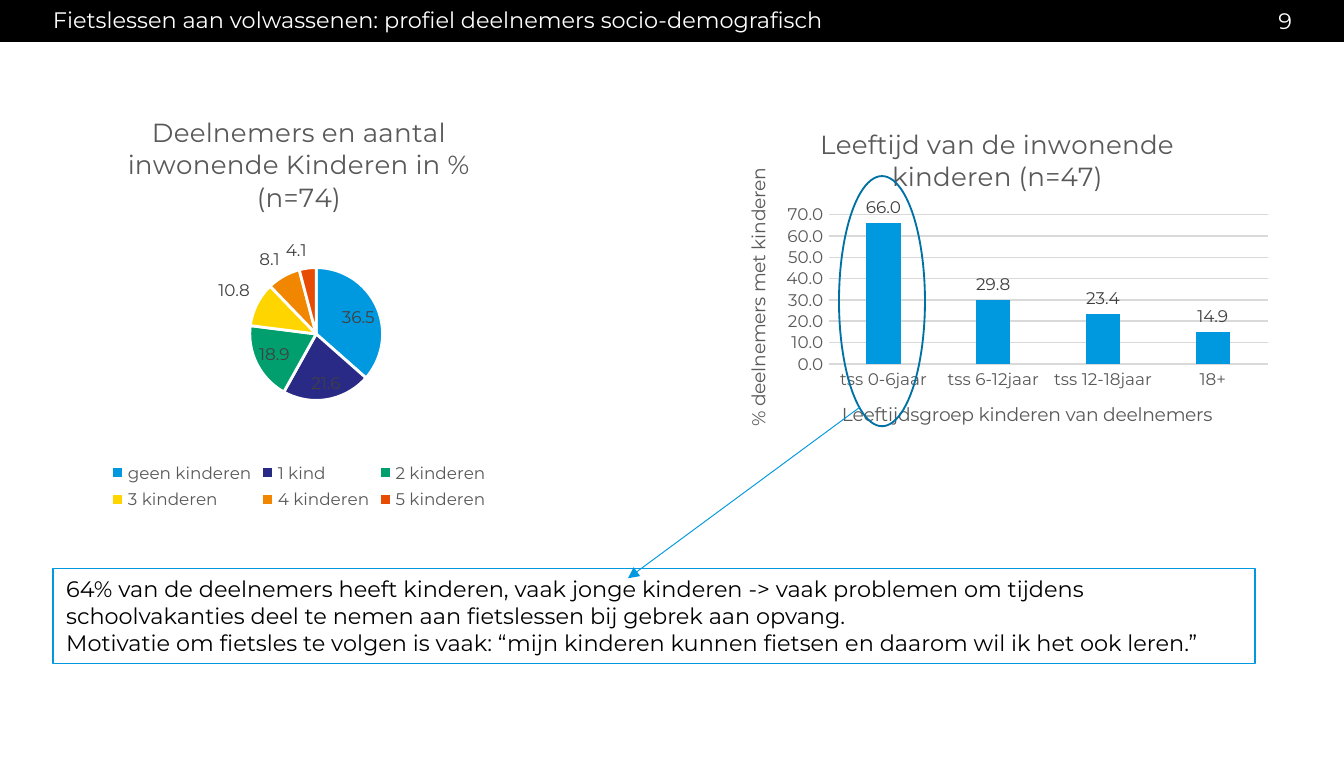
from dataclasses import dataclass

from lxml import etree
from pptx import Presentation
from pptx import util as u
from pptx.chart.data import CategoryChartData
from pptx.dml.color import RGBColor
from pptx.enum import chart as charts
from pptx.enum import shapes, text
from pptx.oxml import parse_xml
from pptx.oxml.ns import nsdecls, qn

EMU_PER_PX = 914400 / 134.4
FONT = "Montserrat"
BLACK = RGBColor(0x00, 0x00, 0x00)
WHITE = RGBColor(0xFF, 0xFF, 0xFF)
BLUE = RGBColor(0x00, 0x99, 0xDF)
DARK_BLUE = RGBColor(0x00, 0x71, 0xA5)
NAVY = RGBColor(0x28, 0x2A, 0x86)
GREEN = RGBColor(0x00, 0x9F, 0x6D)
YELLOW = RGBColor(0xFF, 0xD5, 0x00)
ORANGE = RGBColor(0xF1, 0x86, 0x00)
RED = RGBColor(0xE8, 0x4B, 0x04)
GREY = RGBColor(0x59, 0x59, 0x59)
LABEL_GREY = RGBColor(0x40, 0x40, 0x40)
GRID_GREY = RGBColor(0xD9, 0xD9, 0xD9)


@dataclass(frozen=True)
class Area:
    left: int
    top: int
    width: int
    height: int

    def emu(self) -> tuple:
        return tuple(px(n) for n in (self.left, self.top, self.width, self.height))


@dataclass(frozen=True)
class ChartSpec:
    kind: int
    area: Area
    plot: tuple  # inner plot area as fractions of the chart: x, y, w, h
    title: str
    values: dict
    label_position: int


PIE = ChartSpec(
    charts.XL_CHART_TYPE.PIE, Area(53, 94, 492, 421), (0.4, 0.41, 0.27, 0.32),
    "Deelnemers en aantal inwonende Kinderen in % (n=74)",
    {"geen kinderen": 36.5, "1 kind": 21.6, "2 kinderen": 18.9,
     "3 kinderen": 10.8, "4 kinderen": 8.1, "5 kinderen": 4.1},
    charts.XL_LABEL_POSITION.BEST_FIT)
COLUMNS = ChartSpec(
    charts.XL_CHART_TYPE.COLUMN_CLUSTERED, Area(716, 107, 563, 347), (0.2, 0.31, 0.78, 0.43),
    "Leeftijd van de inwonende kinderen (n=47)",
    {"tss 0-6jaar": 66.0, "tss 6-12jaar": 29.8, "tss 12-18jaar": 23.4, "18+": 14.9},
    charts.XL_LABEL_POSITION.OUTSIDE_END)
SLICE_COLOURS = (BLUE, NAVY, GREEN, YELLOW, ORANGE, RED)


def px(length: int) -> int:
    return round(length * EMU_PER_PX)


def style_font(font, size: int, colour: RGBColor) -> None:
    font.name, font.size, font.bold = FONT, u.Pt(size), False
    font.color.rgb = colour


def add_outline(page, kind, area: Area, colour: RGBColor, width: float):
    shape = page.shapes.add_shape(kind, *area.emu())
    shape.shadow.inherit = False
    shape.fill.background()
    shape.line.color.rgb = colour
    shape.line.width = u.Pt(width)
    return shape


def write(box, words: str, colour: RGBColor, align=text.PP_ALIGN.LEFT) -> None:
    frame = box.text_frame
    frame.word_wrap = True
    frame.vertical_anchor = text.MSO_ANCHOR.MIDDLE
    frame.text = words
    for para in frame.paragraphs:
        para.alignment = align
        for span in para.runs:
            style_font(span.font, 12, colour)


def add_header(page, area: Area, words: str, align=text.PP_ALIGN.LEFT):
    box = page.shapes.add_textbox(*area.emu())
    frame = box.text_frame
    frame.margin_left = frame.margin_right = frame.margin_top = frame.margin_bottom = 0
    write(box, words, WHITE, align)
    return box


def set_title(owner, words: str, size: int) -> None:
    """Title a chart or an axis."""
    title = owner.chart_title if hasattr(owner, "chart_title") else owner.axis_title
    title.text_frame.text = words
    style_font(title.text_frame.paragraphs[0].runs[0].font, size, GREY)


def place_plot(chart, fractions: tuple) -> None:
    """Fix the inner plot area within the chart."""
    area = chart._chartSpace.chart.plotArea
    for layout in area.findall(qn("c:layout")):
        area.remove(layout)
    sizes = "".join(f'<c:{key} val="{value}"/>' for key, value in zip("xywh", fractions))
    area.insert(0, parse_xml(
        f'<c:layout {nsdecls("c")}><c:manualLayout><c:layoutTarget val="inner"/>'
        f'<c:xMode val="edge"/><c:yMode val="edge"/>{sizes}</c:manualLayout></c:layout>'))


def add_chart(page, spec: ChartSpec):
    data = CategoryChartData(number_format="0.0")
    data.categories = list(spec.values)
    data.add_series("Series 1", list(spec.values.values()))
    chart = page.shapes.add_chart(spec.kind, *spec.area.emu(), data).chart
    style_font(chart.font, 10, BLACK)
    chart.has_title = True
    set_title(chart, spec.title, 14)
    chart.has_legend = False
    place_plot(chart, spec.plot)
    plot = chart.plots[0]
    plot.has_data_labels = True
    labels = plot.data_labels
    labels.show_value = True
    labels.number_format, labels.number_format_is_linked = "0.0", False
    labels.position = spec.label_position
    style_font(labels.font, 9, LABEL_GREY)
    return chart


def add_pie(page) -> None:
    chart = add_chart(page, PIE)
    chart.plots[0].vary_by_categories = True
    for index, colour in enumerate(SLICE_COLOURS):
        look = chart.plots[0].series[0].points[index].format
        look.fill.solid()
        look.fill.fore_color.rgb = colour
        look.line.color.rgb = WHITE
        look.line.width = u.Pt(1.5)
    chart.has_legend = True
    chart.legend.position = charts.XL_LEGEND_POSITION.BOTTOM
    chart.legend.include_in_layout = False
    style_font(chart.legend.font, 9, GREY)


def add_columns(page) -> None:
    chart = add_chart(page, COLUMNS)
    plot = chart.plots[0]
    plot.vary_by_categories = False
    plot.gap_width, plot.overlap = 219, -27
    fill = plot.series[0].format.fill
    fill.solid()
    fill.fore_color.rgb = BLUE
    for axis, title in ((chart.category_axis, "Leeftijdsgroep kinderen van deelnemers"),
                        (chart.value_axis, "% deelnemers met kinderen")):
        set_title(axis, title, 10)
        axis.major_tick_mark = axis.minor_tick_mark = charts.XL_TICK_MARK.NONE
        style_font(axis.tick_labels.font, 9, GREY)
    values = chart.value_axis
    values.minimum_scale, values.maximum_scale, values.major_unit = 0, 70, 10
    values.tick_labels.number_format = "0.0"
    values.tick_labels.number_format_is_linked = False
    values.format.line.fill.background()
    for line in (chart.category_axis.format.line, values.major_gridlines.format.line):
        line.color.rgb = GRID_GREY
        line.width = u.Pt(0.75)


def add_arrow(page, start: tuple, end: tuple) -> None:
    arrow = page.shapes.add_connector(
        shapes.MSO_CONNECTOR.STRAIGHT, *(px(n) for n in start + end))
    arrow.line.color.rgb = BLUE
    arrow.line.width = u.Pt(0.5)
    etree.SubElement(arrow.line._get_or_add_ln(), qn("a:tailEnd"), type="triangle")
    etree.SubElement(arrow._element.spPr, qn("a:effectLst"))


def main() -> None:
    deck = Presentation()
    deck.slide_width, deck.slide_height = u.Inches(10), u.Inches(5.63)
    page = deck.slides.add_slide(deck.slide_layouts[6])
    page.background.fill.solid()
    page.background.fill.fore_color.rgb = BLACK

    body = page.shapes.add_shape(shapes.MSO_SHAPE.RECTANGLE, *Area(0, 42, 1344, 715).emu())
    body.shadow.inherit = False
    body.fill.solid()
    body.fill.fore_color.rgb = WHITE
    body.line.fill.background()

    title = add_header(page, Area(53, 0, 1159, 42),
                       "Fietslessen aan volwassenen: profiel deelnemers socio-demografisch")
    title.text_frame.paragraphs[0].line_spacing = 0.9
    add_header(page, Area(980, 0, 312, 42), "9", text.PP_ALIGN.RIGHT)

    note = add_outline(page, shapes.MSO_SHAPE.RECTANGLE, Area(53, 568, 1202, 95), BLUE, 0.75)
    write(note, "64% van de deelnemers heeft kinderen, vaak jonge kinderen -> vaak problemen om "
                "tijdens schoolvakanties deel te nemen aan fietslessen bij gebrek aan opvang.\n"
                "Motivatie om fietsles te volgen is vaak: “mijn kinderen kunnen fietsen en "
                "daarom wil ik het ook leren.”", BLACK)

    add_pie(page)
    add_columns(page)
    add_outline(page, shapes.MSO_SHAPE.OVAL, Area(839, 176, 86, 250), DARK_BLUE, 1)
    add_arrow(page, (860, 407), (628, 578))
    deck.save("out.pptx")


if __name__ == "__main__":
    main()
